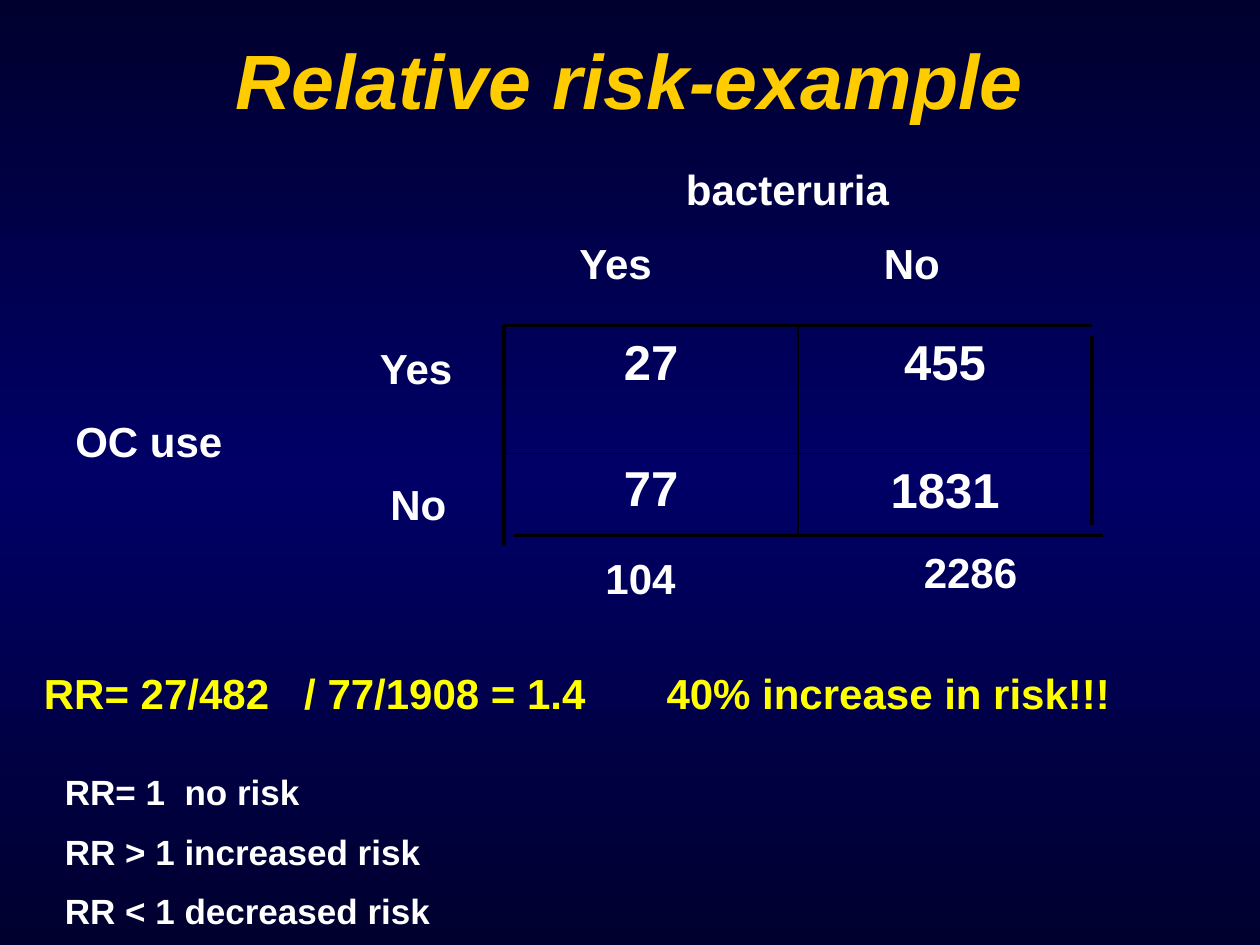
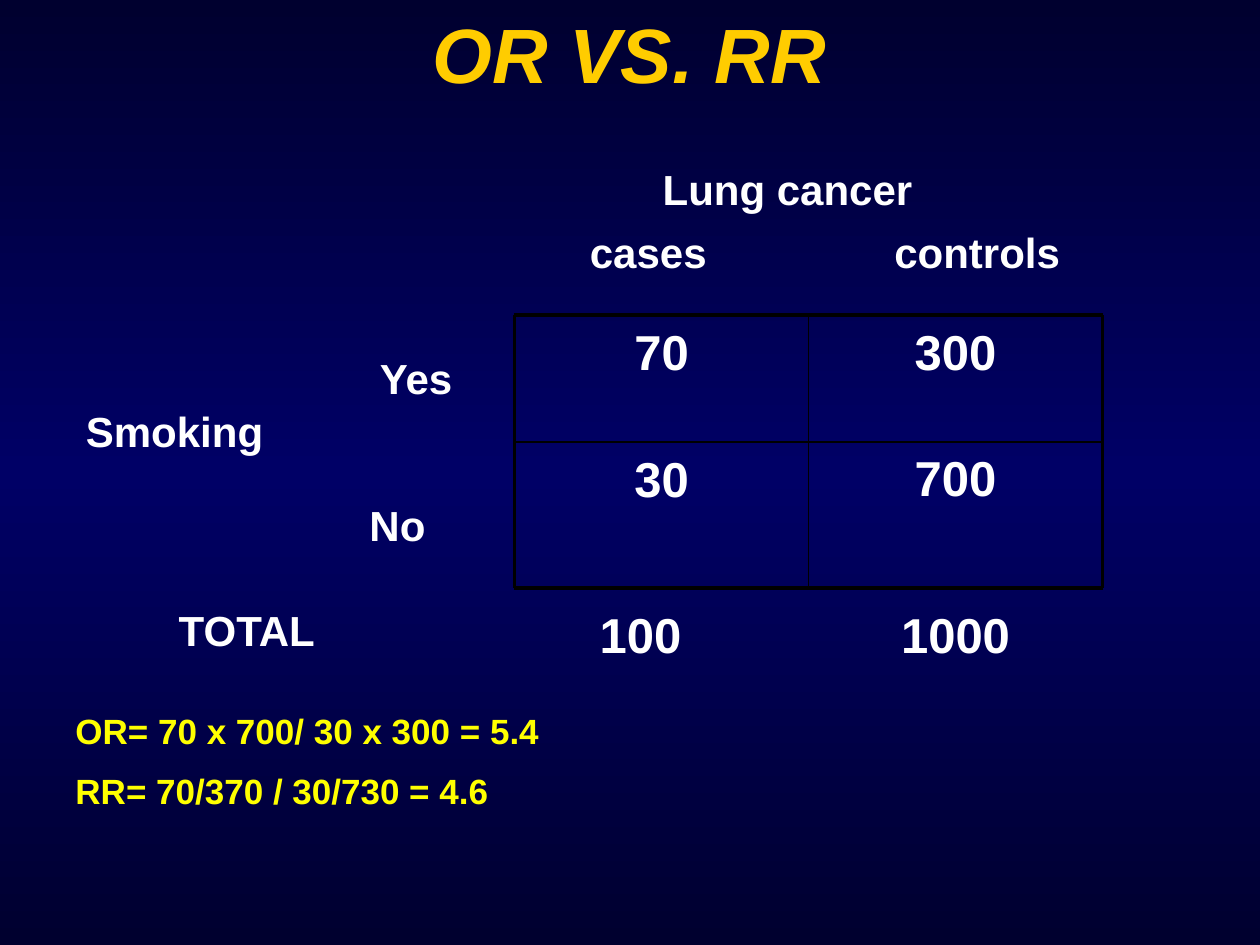
from copy import deepcopy

from lxml import etree
from pptx import Presentation
from pptx import util as u
from pptx.dml.color import RGBColor
from pptx.enum import shapes, text
from pptx.oxml.ns import qn

COLOURS = {"edge": "00002F", "middle": "000066", "title": "FFCC00",
           "text": "FFFFFF", "result": "FFFF00", "rule": "000000"}
FONT = "Arial"
LEFT, CENTER = text.PP_ALIGN.LEFT, text.PP_ALIGN.CENTER

deck = Presentation()
deck.slide_width, deck.slide_height = u.Inches(10), u.Inches(7.5)
UNIT = deck.slide_width / 120  # the grid has 120 columns and 90 rows
CELL_WIDTH = 28


def write(page, place, lines, size=24, colour="text", align=LEFT, tabs=(), title=False):
    """Put lines of bold text at (column, row, columns, rows); tabs are columns from the text edge."""
    box = page.shapes.add_textbox(*(u.Emu(round(part * UNIT)) for part in place))
    frame = box.text_frame
    frame.word_wrap = True
    frame.vertical_anchor = text.MSO_ANCHOR.MIDDLE if title else text.MSO_ANCHOR.TOP
    for index, line in enumerate(lines):
        para = frame.paragraphs[0] if index == 0 else frame.add_paragraph()
        if index:
            para.space_before = u.Pt(10)
        para.add_run().text = line
        para.alignment = align
        if "\t" in line:
            stops = etree.SubElement(para._p.get_or_add_pPr(), qn("a:tabLst"))
            for tab in tabs:
                etree.SubElement(stops, qn("a:tab"), pos=str(round(tab * UNIT)), algn="l")
        para.font.name, para.font.size = FONT, u.Pt(size)
        para.font.bold, para.font.italic = True, title
        para.font.color.rgb = RGBColor.from_string(COLOURS[colour])


def rule(page, ends, weight):
    """Draw a line between grid points (column, row, column, row)."""
    line = page.shapes.add_connector(shapes.MSO_CONNECTOR.STRAIGHT,
                                     *(u.Emu(round(part * UNIT)) for part in ends))
    line.line.color.rgb = RGBColor.from_string(COLOURS["rule"])
    line.line.width = u.Pt(weight)
    etree.SubElement(line._element.spPr, qn("a:effectLst"))


# Shared background: dark edges, lighter middle
master = deck.slide_master
backdrop = master.background.fill
backdrop.gradient()
backdrop.gradient_angle = 90
stop_list = master.element.find(".//" + qn("a:gsLst"))
stop_list.append(deepcopy(stop_list[0]))
for index, (stop, shade) in enumerate(zip(backdrop.gradient_stops, ("edge", "middle", "edge"))):
    stop.color.rgb = RGBColor.from_string(COLOURS[shade])
    stop.position = index / 2

studies = [
    {
        "title": "Relative risk-example", "title_rows": 15,
        "cells": [("27", 48, 31), ("455", 76, 31), ("77", 48, 43), ("1831", 76, 43.2)],
        "rules": [((48, 31, 104, 31), 2.25), ((48, 43.2, 104, 43.2), 1),
                  ((49, 51, 105, 51), 2.25), ((48, 31, 48, 52), 2.25),
                  ((76, 31, 76, 51), 1), ((104, 32, 104, 50), 2.25)],
        "labels": [("bacteruria", 53, 15, 44, CENTER), ("OC use", 6, 39, 24, LEFT),
                   ("Yes", 35, 32, 10, LEFT), ("No", 36, 45, 10, LEFT),
                   ("Yes", 54, 22, 12, LEFT), ("No", 83, 22, 13, LEFT),
                   ("104", 54, 52, 14, CENTER), ("2286", 86.8, 51.5, 11.3, LEFT)],
        "totals": [],
        "notes": [
            ((3, 63, 107, 6), ["RR= 27/482\t/ 77/1908 = 1.4\t40% increase in risk!!!"],
             24, "result", (24.8, 59.3)),
            ((5, 72.8, 65, 17.2), ["RR= 1\tno risk", "RR > 1 increased risk",
                                   "RR < 1 decreased risk"], 20, "text", (11.4,)),
        ],
    },
    {
        "title": "OR VS. RR", "title_rows": 10,
        "cells": [("70", 49, 30), ("300", 77, 30), ("30", 49, 42.1), ("700", 77, 42)],
        "rules": [((49, 30, 105, 30), 2.25), ((49, 42.1, 105, 42.1), 1),
                  ((49, 56, 105, 56), 2.25), ((49, 30, 49, 56), 2.25),
                  ((77, 30, 77, 56), 1), ((105, 30, 105, 56), 2.25)],
        "labels": [("Lung cancer", 61, 15, 28, CENTER), ("Smoking", 7, 38, 24, LEFT),
                   ("Yes", 35, 33, 10, LEFT), ("No", 34, 47, 10, LEFT),
                   ("cases", 55, 21, 19, LEFT), ("controls", 84, 21, 19, LEFT),
                   ("TOTAL", 10, 57, 27, CENTER)],
        "totals": [("100", 51), ("1000", 81)],
        "notes": [
            ((6, 67, 64, 11.2), ["OR= 70 x 700/ 30 x 300 = 5.4", "RR= 70/370 / 30/730 = 4.6"],
             20, "result", ()),
        ],
    },
]

for study in studies:
    page = deck.slides.add_slide(deck.slide_layouts[6])
    write(page, (6, 0, 108, study["title_rows"]), [study["title"]], 44, "title", CENTER, title=True)
    for count, column, row in study["cells"]:
        write(page, (column, row, CELL_WIDTH, 12), [count], 28, align=CENTER)
    for ends, weight in study["rules"]:
        rule(page, ends, weight)
    for label, column, row, width, align in study["labels"]:
        write(page, (column, row, width, 6), [label], align=align)
    for total, column in study["totals"]:
        write(page, (column, 57, 20, 6.8), [total], 28, align=CENTER)
    for place, lines, size, colour, tabs in study["notes"]:
        write(page, place, lines, size, colour, tabs=tabs)

deck.save("out.pptx")
